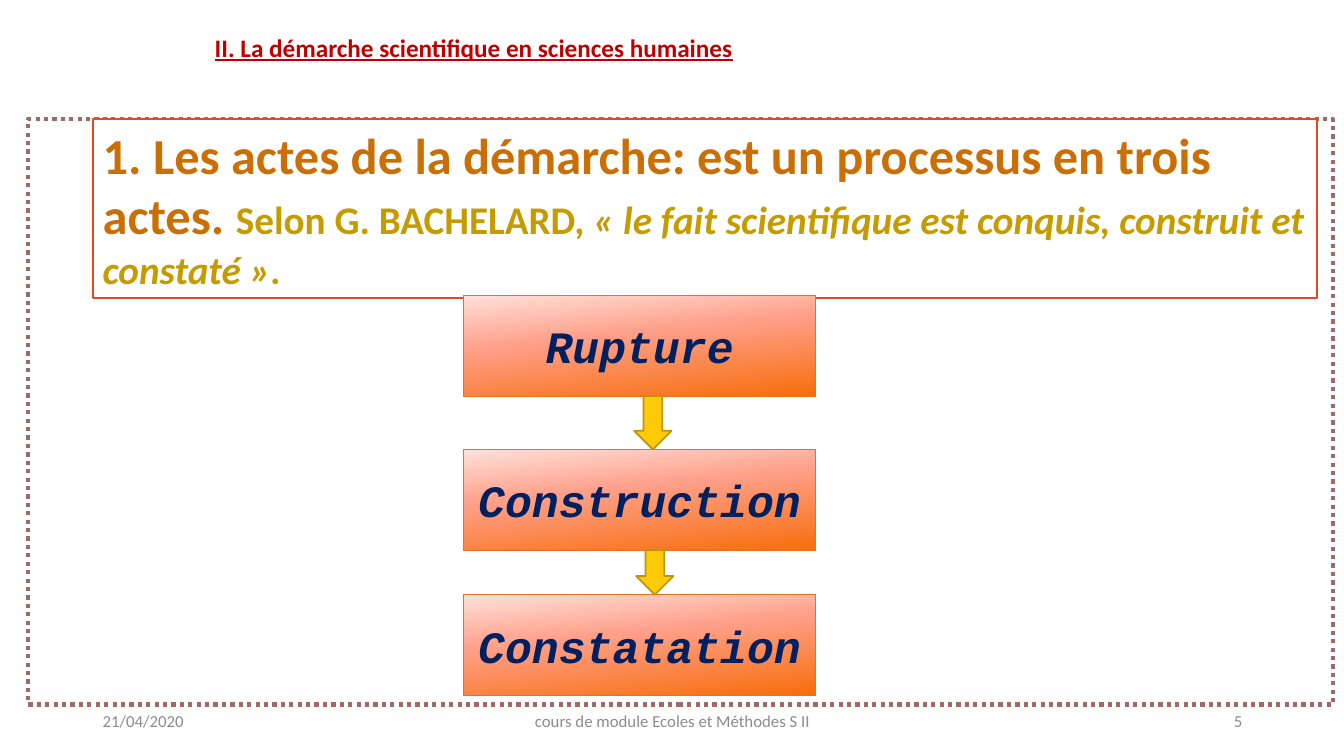
"""Build the slide on the three acts of the scientific approach."""
from copy import deepcopy

from pptx import Presentation
from pptx.dml.color import RGBColor
from pptx.enum.dml import MSO_LINE
from pptx.enum.shapes import MSO_SHAPE as SHAPE
from pptx.enum.text import MSO_ANCHOR as ANCHOR, PP_ALIGN as ALIGN
from pptx.oxml.ns import qn
from pptx.util import Inches, Pt

WHITE = RGBColor(0xFF, 0xFF, 0xFF)
RED = RGBColor(0xC0, 0x00, 0x00)
GRAY = RGBColor(0x8C, 0x8C, 0x8C)
MAUVE = RGBColor(0x9C, 0x6A, 0x6A)
VERMILION = RGBColor(0xE6, 0x48, 0x23)
BROWN = RGBColor(0xCA, 0x6F, 0x06)
OCHRE = RGBColor(0xC5, 0x9B, 0x00)
NAVY = RGBColor(0x00, 0x20, 0x60)
ORANGE = RGBColor(0xEC, 0x70, 0x16)
YELLOW = RGBColor(0xFF, 0xCA, 0x08)
DARK_YELLOW = RGBColor(0xBD, 0x95, 0x06)
ACT_GRADIENT = [
    (0, RGBColor(0xFF, 0xE1, 0xDA)),
    (0.4, RGBColor(0xFF, 0xA0, 0x8A)),
    (1, RGBColor(0xF7, 0x6E, 0x0B)),
]


def add_outlined(kind, left, top, width, height, fill, line, line_width):
    shape = slide.shapes.add_shape(
        kind, Inches(left), Inches(top), Inches(width), Inches(height))
    shape.shadow.inherit = False
    if fill is not None:
        shape.fill.solid()
        shape.fill.fore_color.rgb = fill
    shape.line.color.rgb = line
    shape.line.width = Pt(line_width)
    return shape


def style_font(font, name, size, color, bold=False, italic=False):
    font.name = name
    font.size = Pt(size)
    font.color.rgb = color
    font.bold = bold
    font.italic = italic


presentation = Presentation()
presentation.slide_width = Inches(13.33)
presentation.slide_height = Inches(7.5)
slide = presentation.slides.add_slide(presentation.slide_layouts[6])

heading = slide.shapes.add_textbox(Inches(2.03), Inches(0.27), Inches(5.38), Inches(0.4))
heading.text_frame.word_wrap = False
paragraph = heading.text_frame.paragraphs[0]
paragraph.text = "II. La démarche scientifique en sciences humaines"
style_font(paragraph.font, "Calibri", 18, RED, bold=True)
paragraph.font.underline = True

for text, left, width, alignment in [
    ("21/04/2020", 0.92, 3, ALIGN.LEFT),
    ("cours de module Ecoles et Méthodes S II", 4.42, 4.5, ALIGN.CENTER),
    ("5", 9.42, 3, ALIGN.RIGHT),
]:
    footer = slide.shapes.add_textbox(Inches(left), Inches(6.95), Inches(width), Inches(0.4))
    footer.text_frame.word_wrap = True
    footer.text_frame.vertical_anchor = ANCHOR.MIDDLE
    paragraph = footer.text_frame.paragraphs[0]
    paragraph.text = text
    paragraph.alignment = alignment
    style_font(paragraph.font, "Calibri", 12, GRAY)

frame = add_outlined(SHAPE.RECTANGLE, 0.28, 1.18, 12.94, 5.81, WHITE, MAUVE, 3)
frame.line.dash_style = MSO_LINE.ROUND_DOT

statement = add_outlined(SHAPE.RECTANGLE, 0.92, 1.18, 12.14, 1.78, WHITE, VERMILION, 1.25)
statement.text_frame.word_wrap = True
statement.text_frame.vertical_anchor = ANCHOR.TOP
paragraph = statement.text_frame.paragraphs[0]
paragraph.alignment = ALIGN.LEFT
for text, size, color, italic in [
    ("1. Les actes de la démarche: est un processus en trois actes. ", 36, BROWN, False),
    ("Selon G. BACHELARD, ", 28, OCHRE, False),
    ("« le fait scientifique est conquis, construit et constaté ».", 28, OCHRE, True),
]:
    run = paragraph.add_run()
    run.text = text
    style_font(run.font, "Calibri", size, color, bold=True, italic=italic)

for text, top in [("Rupture", 2.93), ("Construction", 4.46), ("Constatation", 5.9)]:
    act = add_outlined(SHAPE.RECTANGLE, 4.6, top, 3.49, 1, None, ORANGE, 0.75)
    act.fill.gradient()
    act.fill.gradient_angle = 360 - 84
    stop_list = act._element.spPr.find(qn("a:gradFill")).find(qn("a:gsLst"))
    stop_list.append(deepcopy(stop_list[0]))
    for stop, (position, color) in zip(act.fill.gradient_stops, ACT_GRADIENT):
        stop.position = position
        stop.color.rgb = color
    act.text_frame.word_wrap = True
    act.text_frame.vertical_anchor = ANCHOR.MIDDLE
    paragraph = act.text_frame.paragraphs[0]
    paragraph.text = text
    paragraph.alignment = ALIGN.CENTER
    style_font(paragraph.font, "Courier New", 32, NAVY, bold=True, italic=True)

for left, top, height in [(6.29, 3.93, 0.53), (6.31, 5.46, 0.44)]:
    add_outlined(SHAPE.DOWN_ARROW, left, top, 0.37, height, YELLOW, DARK_YELLOW, 1.25)

presentation.save("out.pptx")
